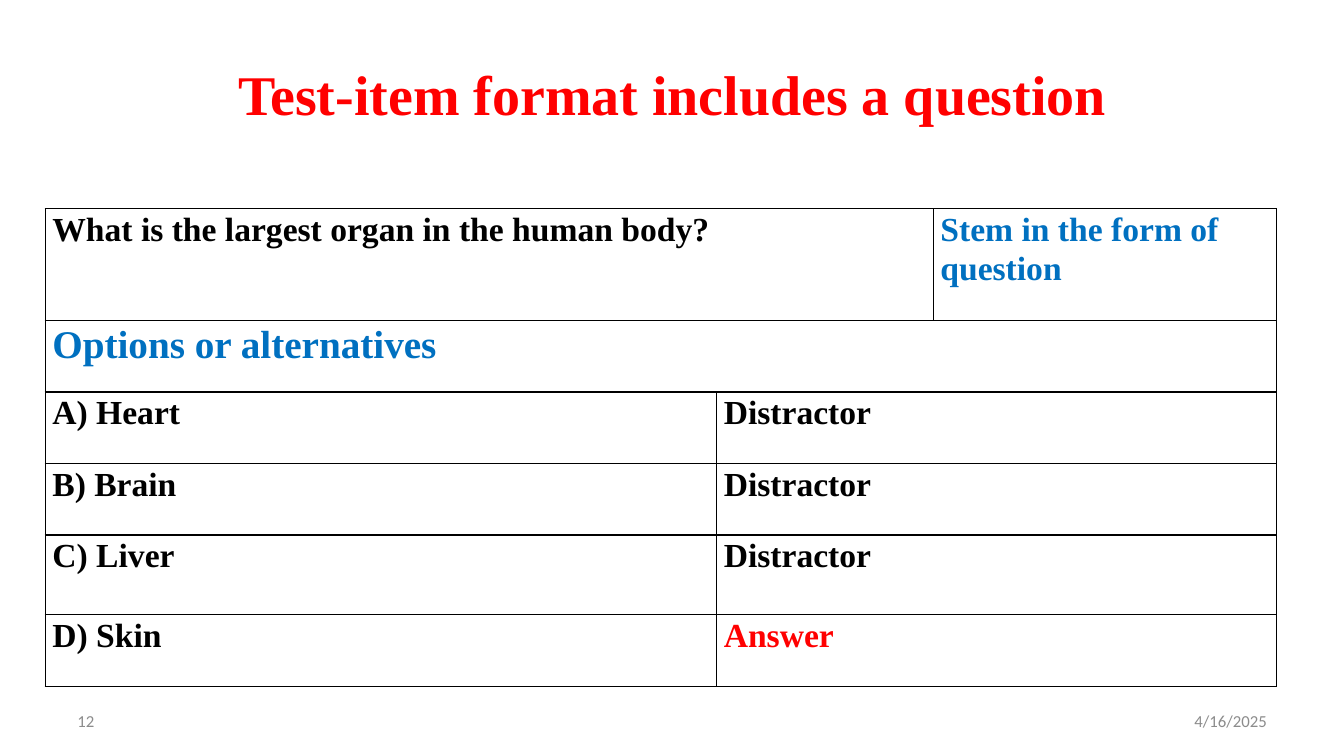
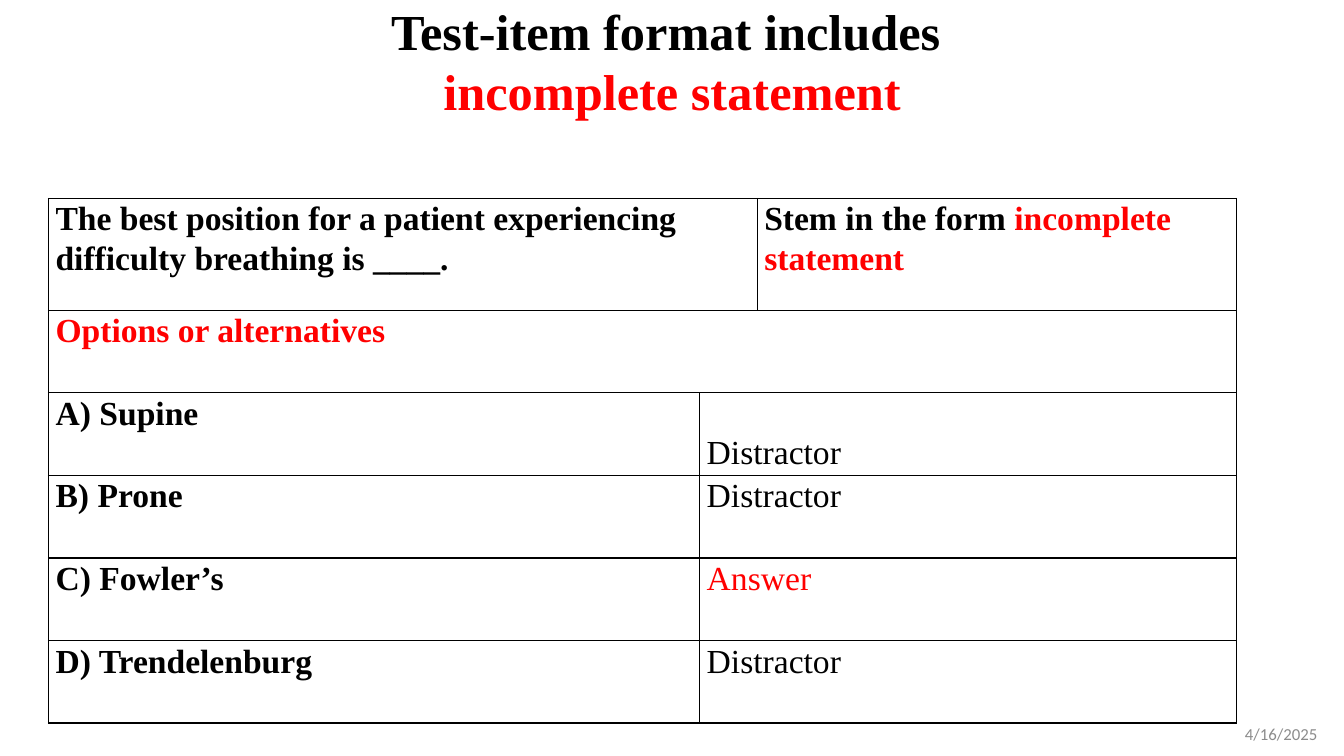
from lxml import etree
from pptx import Presentation
from pptx.dml.color import RGBColor
from pptx.enum import text
from pptx.oxml.ns import qn
from pptx.util import Cm, Pt

BLACK = RGBColor(0x00, 0x00, 0x00)
RED = RGBColor(0xFF, 0x00, 0x00)
BLUE = RGBColor(0x00, 0x70, 0xC0)
GREY = RGBColor(0x8C, 0x8C, 0x8C)
SERIF, SANS = "Times New Roman", "Calibri"
LEFT, RIGHT = text.PP_ALIGN.LEFT, text.PP_ALIGN.RIGHT
DATE = "4/16/2025"

# Lengths are centimetres; a run is (words, colour).
SLIDES = [
    dict(
        title=[("Test-item format includes a question", RED)],
        title_box=(1.7, 0.76, 30.48, 3.18), title_size=40,
        table_at=(1.14, 5.26),
        cols=(16.92, 5.46, 8.65), rows=(2.82, 1.8, 1.8, 1.8, 2.01, 1.8),
        question=[("What is the largest organ in the human body?", BLACK)],
        stem=[("Stem in the form of question", BLUE)],
        heading_color=BLUE, heading_size=28,
        options=["A) Heart", "B) Brain", "C) Liver", "D) Skin"],
        answer=3, bold_roles=True, low_roles=(),
        footers=[(DATE, RIGHT, (24.28, 17.65, 7.9, 1.02)),
                 ("12", LEFT, (1.7, 17.65, 7.9, 1.02))],
    ),
    dict(
        title=[("Test-item format includes ", BLACK), ("incomplete statement", RED)],
        title_box=(0.15, 0, 33.58, 3.05), title_size=36,
        table_at=(1.22, 5),
        cols=(16.41, 1.45, 12.09), rows=(2.82,) + (2.08,) * 5,
        question=[("The best position for a patient experiencing "
                   "difficulty breathing is ____.", BLACK)],
        stem=[("Stem in the form ", BLACK), ("incomplete statement", RED)],
        heading_color=RED, heading_size=24,
        options=["A) Supine", "B) Prone", "C) Fowler’s", "D) Trendelenburg"],
        answer=2, bold_roles=False, low_roles=(0,),
        footers=[(DATE, RIGHT, (30.4, 18.19, 3.05, 0.58))],
    ),
]


def add_run(p, words, color, size, bold=True, font=SERIF):
    r = p.add_run()
    r.text = words
    r.font.name, r.font.size, r.font.bold = font, Pt(size), bold
    r.font.color.rgb = color


def add_title(slide, runs, box, size):
    """Fill the title placeholder, one line for each run."""
    sp = slide.shapes.title
    sp.left, sp.top, sp.width, sp.height = map(Cm, box)
    tf = sp.text_frame
    tf.auto_size = text.MSO_AUTO_SIZE.NONE
    tf.vertical_anchor = text.MSO_ANCHOR.MIDDLE
    p = tf.paragraphs[0]
    p.alignment = text.PP_ALIGN.CENTER
    for i, (words, color) in enumerate(runs):
        if i:
            p.add_line_break()
        add_run(p, words, color, size)


def add_footer(slide, words, align, box):
    tf = slide.shapes.add_textbox(*map(Cm, box)).text_frame
    tf.word_wrap = True
    tf.vertical_anchor = text.MSO_ANCHOR.MIDDLE
    p = tf.paragraphs[0]
    p.alignment = align
    add_run(p, words, GREY, 12, False, SANS)


def style_cell(cell):
    """Black outline, no fill, narrow margins."""
    tcPr = cell._tc.get_or_add_tcPr()
    for side in ("lnL", "lnR", "lnT", "lnB"):
        ln = etree.SubElement(tcPr, qn("a:" + side), w=str(Pt(1)))
        fill = etree.SubElement(ln, qn("a:solidFill"))
        etree.SubElement(fill, qn("a:srgbClr"), val=str(BLACK))
    cell.fill.background()
    cell.margin_left = cell.margin_right = Cm(0.18)
    cell.margin_top = cell.margin_bottom = 0


def write_cell(cell, runs, size=24, bold=True):
    p = cell.text_frame.paragraphs[0]
    p.line_spacing = 1.07
    for words, color in runs:
        add_run(p, words, color, size, bold)


def add_item_table(slide, item):
    cols, rows = item["cols"], item["rows"]
    frame = slide.shapes.add_table(
        len(rows), len(cols), *map(Cm, item["table_at"]), Cm(sum(cols)), Cm(sum(rows)))
    table = frame.table
    table.first_row = table.horz_banding = False
    for col, width in zip(table.columns, cols):
        col.width = Cm(width)
    for row, height in zip(table.rows, rows):
        row.height = Cm(height)
    for cell in table.iter_cells():
        style_cell(cell)

    table.cell(0, 0).merge(table.cell(0, 1))
    write_cell(table.cell(0, 0), item["question"])
    write_cell(table.cell(0, 2), item["stem"])
    table.cell(1, 0).merge(table.cell(1, 2))
    write_cell(table.cell(1, 0), [("Options or alternatives", item["heading_color"])],
               item["heading_size"])
    for i, option in enumerate(item["options"]):
        row = i + 2
        write_cell(table.cell(row, 0), [(option, BLACK)])
        role = table.cell(row, 1)
        role.merge(table.cell(row, 2))
        run = ("Answer", RED) if i == item["answer"] else ("Distractor", BLACK)
        write_cell(role, [run], bold=item["bold_roles"])
        if i in item["low_roles"]:
            role.vertical_anchor = text.MSO_ANCHOR.BOTTOM
            role.margin_bottom = Cm(0.1)


def main():
    prs = Presentation()
    prs.slide_width, prs.slide_height = Cm(33.87), Cm(19.05)
    title_only = prs.slide_layouts[5]
    for item in SLIDES:
        slide = prs.slides.add_slide(title_only)
        add_title(slide, item["title"], item["title_box"], item["title_size"])
        add_item_table(slide, item)
        for footer in item["footers"]:
            add_footer(slide, *footer)
    prs.save("out.pptx")


if __name__ == "__main__":
    main()
